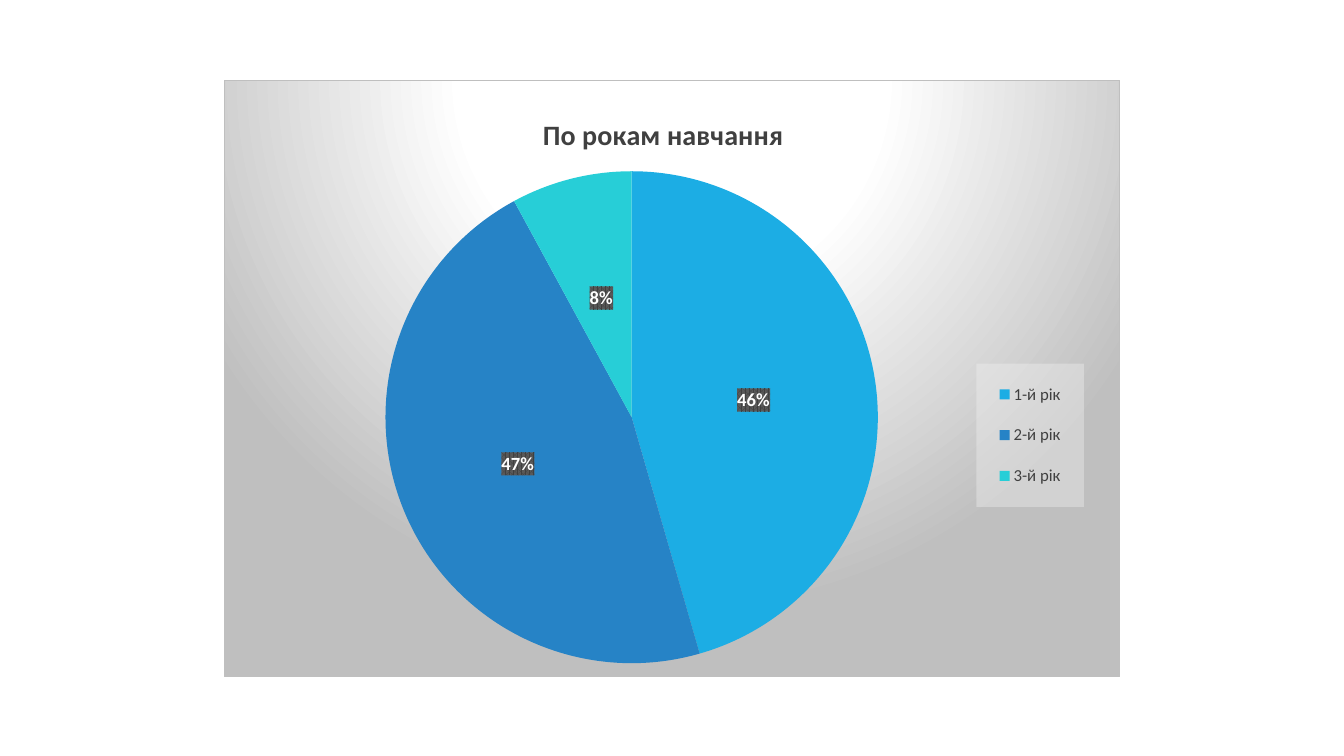
from lxml import etree
from pptx import Presentation
from pptx.chart.data import CategoryChartData
from pptx.dml.color import RGBColor
from pptx.enum.chart import XL_CHART_TYPE as ChartType
from pptx.enum.chart import XL_LABEL_POSITION as LabelPos
from pptx.enum.chart import XL_LEGEND_POSITION as LegendPos
from pptx.oxml import parse_xml
from pptx.oxml.ns import nsdecls, qn
from pptx.util import Inches, Pt

FONT = "Calibri"
DARK = "404040"
YEARS = {
    "1-й рік": (46, "1CADE4"),
    "2-й рік": (47, "2683C6"),
    "3-й рік": (8, "27CED7"),
}
BACKDROP = """
<a:gradFill><a:gsLst>
  <a:gs pos="0"><a:srgbClr val="FFFFFF"/></a:gs>
  <a:gs pos="39000"><a:srgbClr val="FFFFFF"/></a:gs>
  <a:gs pos="100000"><a:srgbClr val="BFBFBF"/></a:gs>
</a:gsLst><a:path path="circle">
  <a:fillToRect l="50000" t="-80000" r="50000" b="180000"/>
</a:path></a:gradFill>
<a:ln w="9525"><a:solidFill><a:srgbClr val="BFBFBF"/></a:solidFill></a:ln>"""
LEGEND_FILL = """
<a:solidFill><a:srgbClr val="F2F2F2"><a:alpha val="39000"/></a:srgbClr></a:solidFill>
<a:ln><a:noFill/></a:ln>"""
LABEL_FILL = """
<a:pattFill prst="pct75"><a:fgClr><a:srgbClr val="404040"/></a:fgClr>
<a:bgClr><a:srgbClr val="595959"/></a:bgClr></a:pattFill>
<a:ln><a:noFill/></a:ln>"""


def rgb(color):
    return RGBColor.from_string(color)


def format_font(font, size, color=DARK, bold=False):
    font.name, font.size, font.bold = FONT, Pt(size), bold
    font.color.rgb = rgb(color)


def write_text(tf, text, **style):
    r = tf.paragraphs[0].add_run()
    r.text = text
    format_font(r.font, **style)


def shape_props(content):
    return parse_xml(f'<c:spPr {nsdecls("c", "a")}>{content}</c:spPr>')


def set_layout(parent, index, target=None, **fractions):
    """Place a chart part by fractions (x, y, w, h) of the chart's box."""
    for old in parent.findall(qn("c:layout")):
        parent.remove(old)
    layout = etree.Element(qn("c:layout"))
    manual = etree.SubElement(layout, qn("c:manualLayout"))
    if target:
        etree.SubElement(manual, qn("c:layoutTarget")).set("val", target)
    for side in ("x", "y"):
        etree.SubElement(manual, qn(f"c:{side}Mode")).set("val", "edge")
    for side, value in fractions.items():
        etree.SubElement(manual, qn(f"c:{side}")).set("val", str(value))
    parent.insert(index, layout)


def add_title(chart):
    write_text(chart.chart_title.text_frame, "По рокам навчання", size=20, bold=True)
    set_layout(chart.element.find(".//" + qn("c:title")), 1, x=0.35, y=0.05)


def add_legend(chart):
    chart.has_legend = True
    chart.legend.position = LegendPos.RIGHT
    chart.legend.include_in_layout = False
    format_font(chart.legend.font, size=12)
    legend = chart.element.find(".//" + qn("c:legend"))
    set_layout(legend, 1, x=0.84, y=0.475, w=0.12, h=0.24)
    legend.find(qn("c:overlay")).addnext(shape_props(LEGEND_FILL))


def format_slices(chart):
    plot = chart.plots[0]
    plot.vary_by_categories = True
    series = plot.series[0]
    for i, (_, color) in enumerate(YEARS.values()):
        fill = series.points[i].format.fill
        fill.solid()
        fill.fore_color.rgb = rgb(color)
    labels = series.data_labels
    labels.show_percentage = True
    labels.show_value = False
    labels.position = LabelPos.CENTER
    format_font(labels.font, size=13.3, color="FFFFFF", bold=True)
    txt = chart.element.find(f'.//{qn("c:ser")}/{qn("c:dLbls")}/{qn("c:txPr")}')
    txt.addprevious(shape_props(LABEL_FILL))
    set_layout(chart.element.find(".//" + qn("c:plotArea")), 0, "inner",
               x=0.18, y=0.15, w=0.55, h=0.83)


def add_year_pie(slide, left, top, width, height):
    data = CategoryChartData()
    data.categories = list(YEARS)
    data.add_series("Series 1", [value for value, _ in YEARS.values()])
    box = [Inches(n) for n in (left, top, width, height)]
    chart = slide.shapes.add_chart(ChartType.PIE, *box, data).chart
    format_font(chart.font, size=10, color="000000")
    add_title(chart)
    add_legend(chart)
    format_slices(chart)
    chart.element.find(qn("c:chart")).addnext(shape_props(BACKDROP))


def main():
    prs = Presentation()
    prs.slide_width, prs.slide_height = Inches(13.33), Inches(7.5)
    slide = prs.slides.add_slide(prs.slide_layouts[6])
    add_year_pie(slide, 2.22, 0.79, 8.89, 5.93)
    prs.save("out.pptx")


if __name__ == "__main__":
    main()
